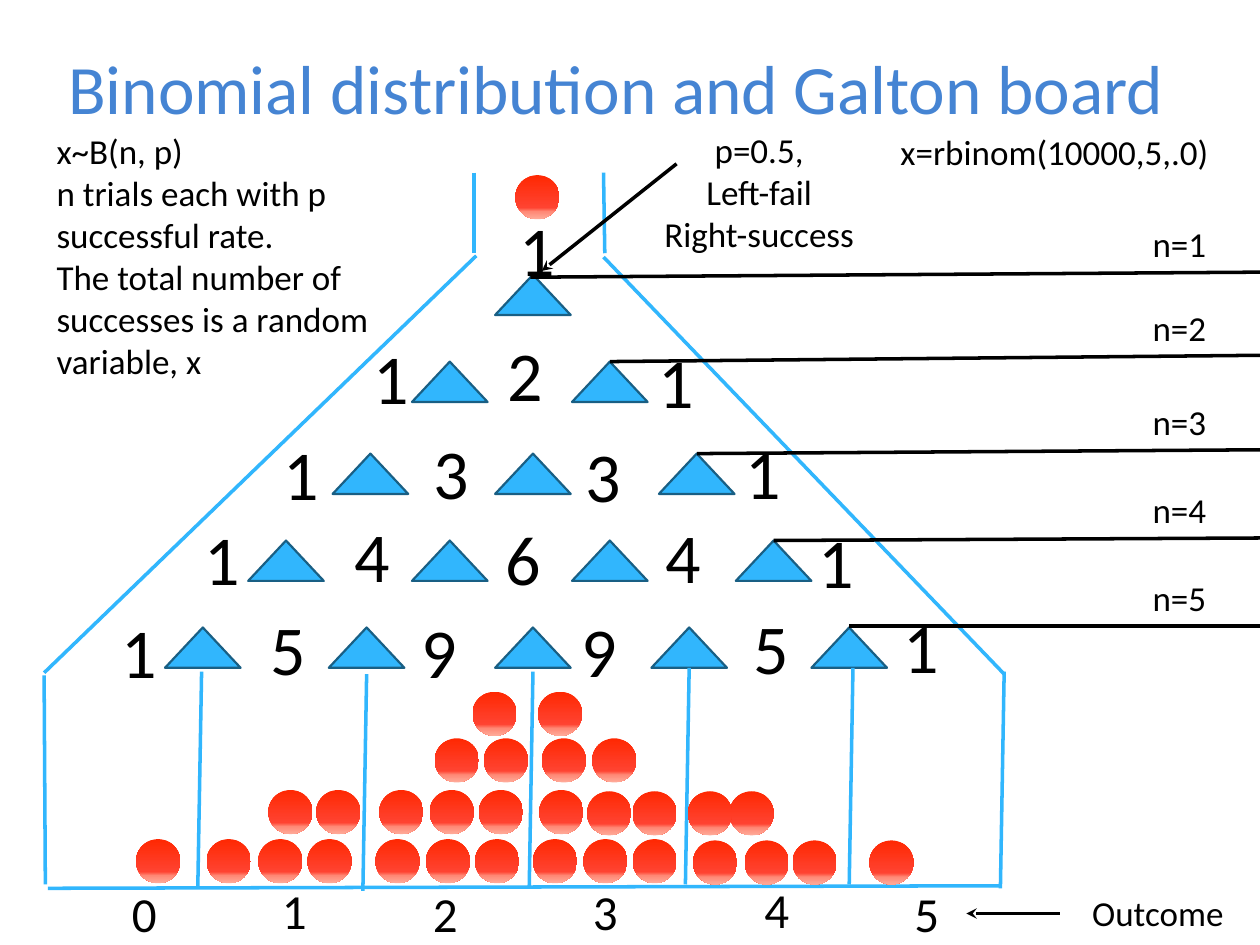
"""Build a slide on the binomial distribution and the Galton board."""
from lxml import etree
from pptx import Presentation
from pptx.dml.color import RGBColor
from pptx.enum.shapes import MSO_CONNECTOR, MSO_SHAPE
from pptx.enum.text import MSO_ANCHOR, MSO_AUTO_SIZE, PP_ALIGN
from pptx.oxml.ns import qn
from pptx.util import Inches, Pt

LEFT, CENTER = PP_ALIGN.LEFT, PP_ALIGN.CENTER
MIDDLE, TOP = MSO_ANCHOR.MIDDLE, MSO_ANCHOR.TOP
GROW, FIXED = MSO_AUTO_SIZE.SHAPE_TO_FIT_TEXT, MSO_AUTO_SIZE.NONE
STRAIGHT = MSO_CONNECTOR.STRAIGHT
PEG, BALL = MSO_SHAPE.ISOSCELES_TRIANGLE, MSO_SHAPE.OVAL
COLORS = {"title": "4584D3", "board": "31B6FD", "edge": "195F84", "ink": "000000"}
SHADES = [(0, "FF2802"), (74, "FF4331"), (83, "FF8976"), (100, "FFAA99")]

deck = Presentation()
deck.slide_width, deck.slide_height = Inches(10), Inches(7.5)
slide = deck.slides.add_slide(deck.slide_layouts[5])
shapes = slide.shapes


def write(text, x, y, w, h, size=20, color="ink", align=CENTER, anchor=TOP, fit=GROW, box=None):
    box = box or shapes.add_textbox(0, 0, 0, 0)
    box.left, box.top, box.width, box.height = map(Inches, (x, y, w, h))
    frame = box.text_frame
    frame.text = text
    frame.word_wrap = True
    frame.auto_size = fit
    frame.vertical_anchor = anchor
    for para in frame.paragraphs:
        para.alignment = align
        font = para.runs[0].font
        font.name, font.size = "Calibri", Pt(size)
        font.color.rgb = RGBColor.from_string(COLORS[color])


def draw(x1, y1, x2, y2, color="board", arrow=False):
    line = shapes.add_connector(STRAIGHT, *map(Inches, (x1, y1, x2, y2)))
    line.line.width = Pt(2)
    line.line.color.rgb = RGBColor.from_string(COLORS[color])
    if arrow:
        etree.SubElement(line.line._get_or_add_ln(), qn("a:tailEnd"), type="stealth")
    etree.SubElement(line._element.spPr, qn("a:effectLst"))


write("x~B(n, p)\nn trials each with p successful rate.\n"
      "The total number of successes is a random variable, x",
      0.35, 0.98, 2.89, 2.12, align=LEFT)
write("Binomial distribution and Galton board", 0.25, 0, 9.28, 1.37, size=39.6,
      color="title", anchor=MIDDLE, fit=FIXED, box=shapes.title)

for ends in [(3.76, 1.37, 3.76, 2.01), (4.79, 1.37, 4.8, 2.01),
             (3.78, 2.03, 0.35, 5.34), (4.79, 2.04, 7.97, 5.35),
             (7.94, 7.03, 0.38, 7.05), (0.35, 5.36, 0.36, 7.02),
             (7.97, 5.33, 7.94, 7.05)]:
    draw(*ends)

pegs = [(2.18, [3.93]),
        (2.87, [3.27, 4.54]),
        (3.6, [2.64, 3.93, 5.23]),
        (4.29, [1.97, 3.27, 4.54, 5.84]),
        (4.98, [1.31, 2.61, 3.93, 5.17, 6.44])]
for y, row in pegs:
    for x in row:
        peg = shapes.add_shape(PEG, Inches(x), Inches(y), Inches(0.6), Inches(0.32))
        peg.shadow.inherit = False
        peg.fill.solid()
        peg.fill.fore_color.rgb = RGBColor.from_string(COLORS["board"])
        peg.line.color.rgb = RGBColor.from_string(COLORS["edge"])
        peg.line.width = Pt(1.25)

for x, y in [(1.6, 5.33), (2.91, 5.35), (4.23, 5.33), (5.47, 5.3), (6.77, 5.3)]:
    draw(x, y, x - 0.03, y + 1.72)

balls = [(1.39, [4.09]),
         (6.66, [4.23, 4.63, 5.02, 2.98, 3.38, 3.77, 1.64, 2.05, 2.44, 1.08]),
         (6.67, [6.9, 5.5, 5.91, 6.29]),
         (6.27, [3.41, 3.8, 4.28, 2.13, 2.51, 3.01]),
         (6.28, [5.79, 4.66, 5.02, 5.46]),
         (5.86, [4.3, 4.7, 3.45, 3.84]),
         (5.49, [4.27, 3.75])]
for y, row in balls:
    for x in row:
        ball = shapes.add_shape(BALL, Inches(x), Inches(y), Inches(0.35), Inches(0.35))
        ball.shadow.inherit = False
        ball.line.fill.background()
        ball.fill.gradient()
        ball.fill.gradient_angle = 270
        stops = ball._element.spPr.find(qn("a:gradFill")).find(qn("a:gsLst"))
        for stop in list(stops):
            stops.remove(stop)
        for place, shade in SHADES:
            stop = etree.SubElement(stops, qn("a:gs"), pos=str(place * 1000))
            etree.SubElement(stop, qn("a:srgbClr"), val=shade)

counts = [[("1", 3.95, 1.59)],
          [("1", 2.79, 2.61), ("2", 3.85, 2.58), ("1", 5.05, 2.64)],
          [("1", 2.08, 3.37), ("3", 3.27, 3.36), ("3", 4.47, 3.38), ("1", 5.74, 3.36)],
          [("1", 1.45, 4.04), ("4", 2.64, 4.02), ("6", 3.84, 4.04), ("4", 5.11, 4.03),
           ("1", 6.32, 4.07)],
          [("1", 0.79, 4.78), ("5", 1.97, 4.76), ("9", 3.17, 4.78), ("9", 4.44, 4.77),
           ("5", 5.81, 4.75), ("1", 7, 4.74)]]
for row in counts:
    for text, x, y in row:
        write(text, x, y, 0.63, 0.77, size=40)

draw(5.37, 1.3, 4.3, 2.15, color="ink", arrow=True)
write("p=0.5,\nLeft-fail\nRight-success", 5.05, 0.97, 1.95, 1.11)

trials = [(2.16, 4.21, 2.2), (2.82, 4.84, 2.87), (3.57, 5.53, 3.6),
          (4.27, 6.14, 4.29), (4.97, 6.74, 4.97)]
for n, (y, x, end) in enumerate(trials, 1):
    draw(10, y, x, end, color="ink")
    write(f"n={n}", 8.87, y - 0.44, 0.98, 0.44)

sums = [(0.83, 6.96), (2.02, 6.94), (3.22, 6.96), (4.49, 6.95), (5.85, 6.93), (7.04, 6.96)]
for n, (x, y) in enumerate(sums):
    write(str(n), x, y, 0.63, 0.57, size=28)
draw(8.41, 7.25, 7.67, 7.25, color="ink", arrow=True)
write("Outcome", 8.41, 7.03, 1.56, 0.44)
write("x=rbinom(10000,5,.0)", 6.77, 0.99, 3.2, 0.44)

deck.save("out.pptx")
